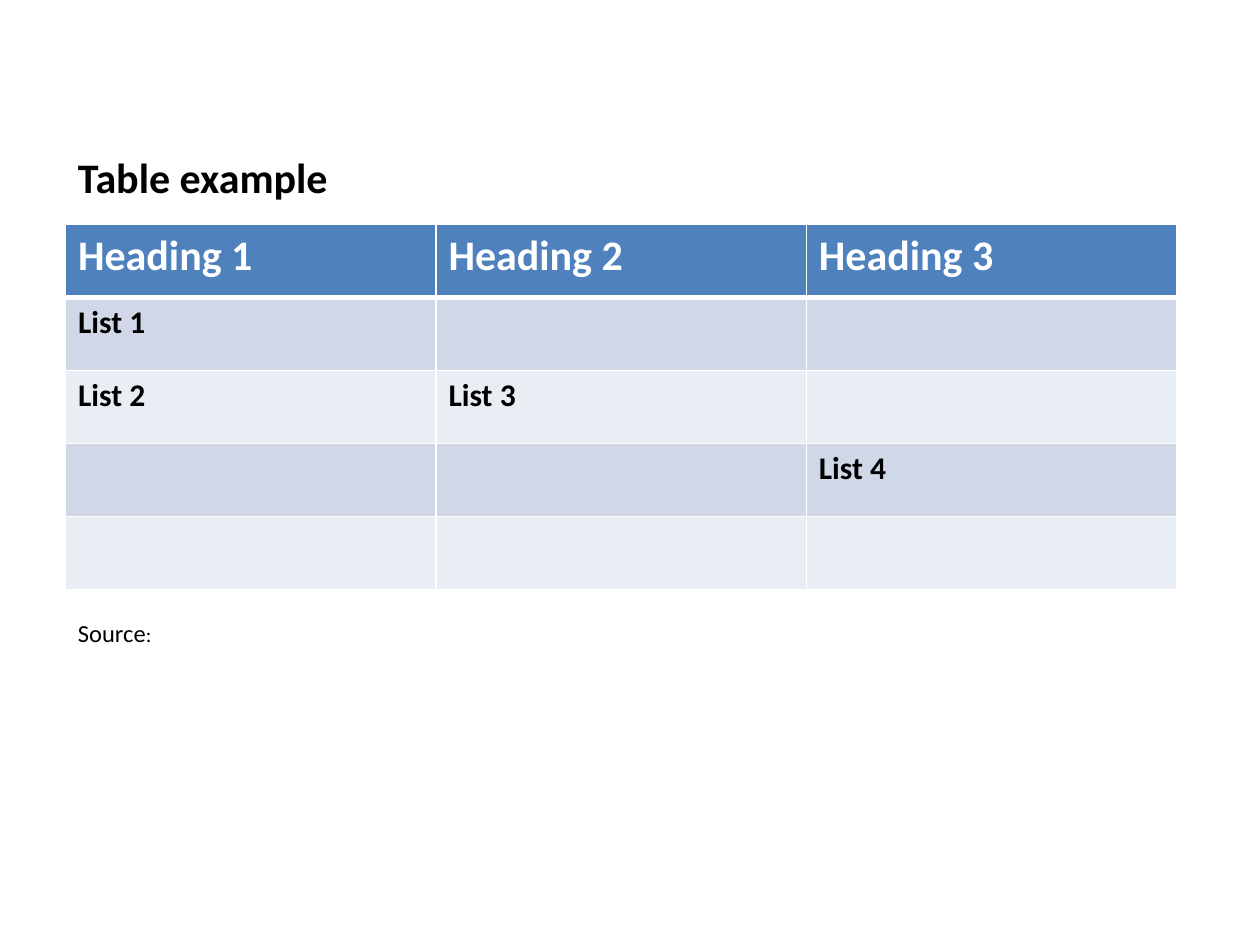
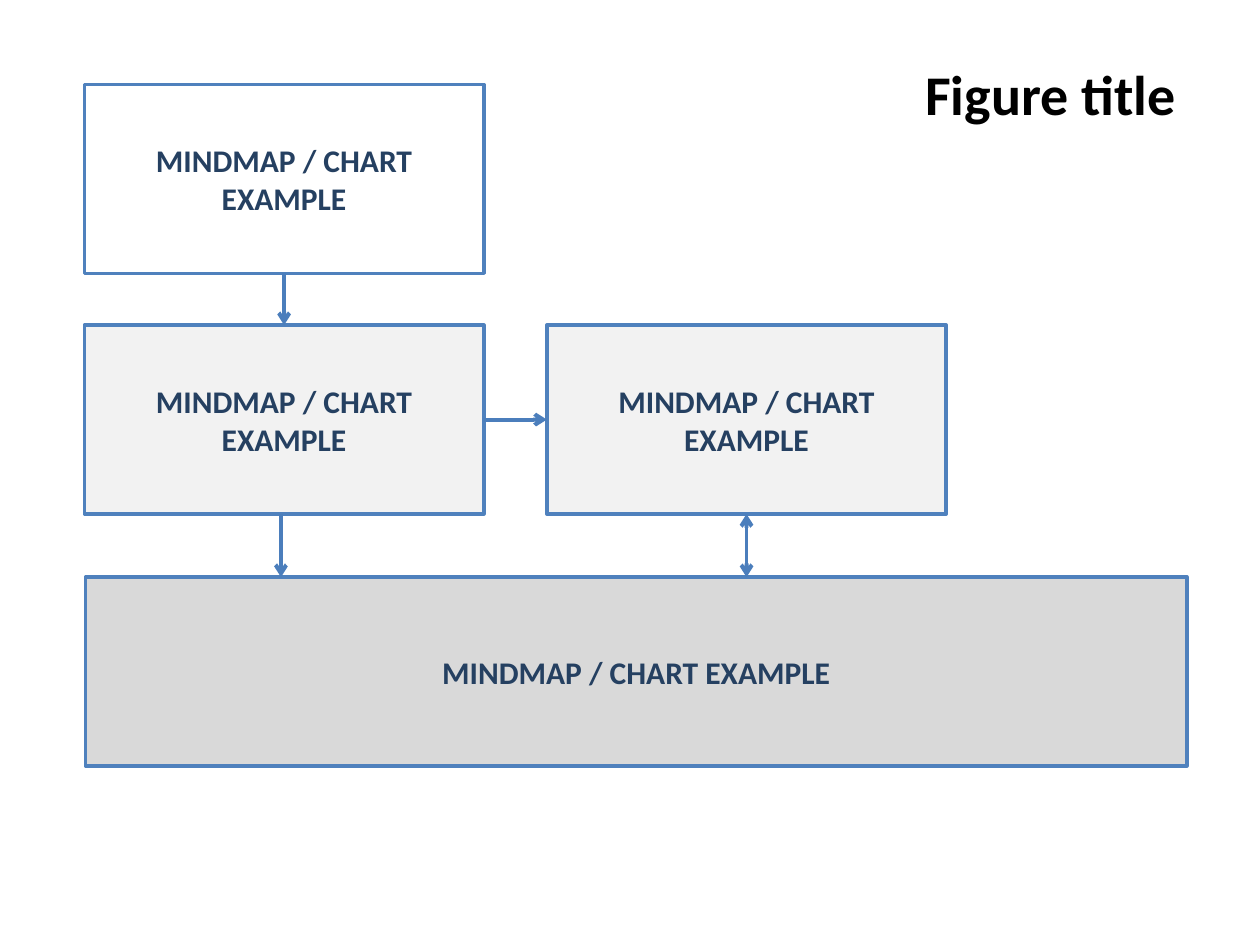
from lxml.etree import SubElement
from pptx import Presentation
from pptx.dml.color import RGBColor
from pptx.enum.shapes import MSO_CONNECTOR, MSO_SHAPE
from pptx.enum.text import MSO_ANCHOR, PP_ALIGN
from pptx.oxml.ns import qn
from pptx.util import Inches, Pt

FONT = "Calibri"
BLACK = RGBColor(0x00, 0x00, 0x00)
WHITE = RGBColor(0xFF, 0xFF, 0xFF)
BLUE = RGBColor(0x4F, 0x81, 0xBD)
ARROW_BLUE = RGBColor(0x4B, 0x7E, 0xBC)
NAVY = RGBColor(0x25, 0x40, 0x61)
BAND_DARK = RGBColor(0xD0, 0xD8, 0xE8)
BAND_LIGHT = RGBColor(0xE9, 0xED, 0xF4)
LIGHT_GREY = RGBColor(0xF2, 0xF2, 0xF2)
GREY = RGBColor(0xD9, 0xD9, 0xD9)

TABLE_ROWS = [
    ["Heading 1", "Heading 2", "Heading 3"],
    ["List 1", "", ""],
    ["List 2", "List 3", ""],
    ["", "", "List 4"],
    ["", "", ""],
]
COLUMN_WIDTH, ROW_HEIGHT = 2.94, 0.58

BOX_WIDTH, BOX_HEIGHT = 3.17, 1.5
LEFT_COLUMN, RIGHT_COLUMN = 0.67, 4.34
TOP_ROW, MIDDLE_ROW, BOTTOM_ROW = 0.67, 2.58, 4.58
TWO_LINES = "MINDMAP / CHART\nEXAMPLE"
ONE_LINE = "MINDMAP / CHART EXAMPLE"


def style_font(font, size, color=BLACK, bold=True):
    font.name = FONT
    font.size = Pt(size)
    font.bold = bold
    font.color.rgb = color


def add_text(page, left, top, width, height, text, size, bold=True, align=PP_ALIGN.LEFT):
    box = page.shapes.add_textbox(Inches(left), Inches(top), Inches(width), Inches(height))
    box.text_frame.word_wrap = True
    para = box.text_frame.paragraphs[0]
    para.text = text
    para.alignment = align
    style_font(para.font, size, bold=bold)
    return para


def set_borders(cell, bottom_width):
    """Draw white cell borders, with its own width for the bottom one."""
    properties = cell._tc.get_or_add_tcPr()
    for side, width in (("L", 1), ("R", 1), ("T", 1), ("B", bottom_width)):
        line = SubElement(properties, qn(f"a:ln{side}"), w=str(Pt(width)))
        fill = SubElement(line, qn("a:solidFill"))
        SubElement(fill, qn("a:srgbClr"), val=str(WHITE))


def add_table(page, left, top, rows):
    columns = len(rows[0])
    table = page.shapes.add_table(
        len(rows), columns, Inches(left), Inches(top),
        Inches(COLUMN_WIDTH * columns), Inches(ROW_HEIGHT * len(rows)),
    ).table
    for column in table.columns:
        column.width = Inches(COLUMN_WIDTH)
    for row_index, texts in enumerate(rows):
        is_heading = row_index == 0
        band = BLUE if is_heading else (BAND_LIGHT, BAND_DARK)[row_index % 2]
        table.rows[row_index].height = Inches(ROW_HEIGHT)
        for column_index, text in enumerate(texts):
            cell = table.cell(row_index, column_index)
            set_borders(cell, 3 if is_heading else 1)
            cell.fill.solid()
            cell.fill.fore_color.rgb = band
            para = cell.text_frame.paragraphs[0]
            para.text = text
            style_font(para.font, 24 if is_heading else 18, WHITE if is_heading else BLACK)


def add_box(page, left, top, text, fill, width=BOX_WIDTH):
    box = page.shapes.add_shape(
        MSO_SHAPE.RECTANGLE, Inches(left), Inches(top), Inches(width), Inches(BOX_HEIGHT))
    box.shadow.inherit = False
    box.fill.solid()
    box.fill.fore_color.rgb = fill
    box.line.color.rgb = BLUE
    box.line.width = Pt(2)
    frame = box.text_frame
    frame.word_wrap = True
    frame.vertical_anchor = MSO_ANCHOR.MIDDLE
    frame.text = text
    for para in frame.paragraphs:
        para.alignment = PP_ALIGN.CENTER
        style_font(para.font, 18, NAVY)


def add_arrow(page, start, end, both_ends=False):
    arrow = page.shapes.add_connector(
        MSO_CONNECTOR.STRAIGHT, *(Inches(value) for value in (*start, *end)))
    arrow.line.color.rgb = ARROW_BLUE
    arrow.line.width = Pt(2.25)
    line = arrow.line._get_or_add_ln()
    for name in ("headEnd", "tailEnd") if both_ends else ("tailEnd",):
        SubElement(line, qn(f"a:{name}"), type="arrow")
    SubElement(arrow._element.spPr, qn("a:effectLst"))


def build_table_page(page):
    add_table(page, 0.52, 1.78, TABLE_ROWS)
    add_text(page, 0.52, 1.15, 4.92, 0.5, "Table example", 24)
    source = add_text(page, 0.52, 4.86, 3.92, 0.34, "Source", 14, bold=False)
    colon = source.add_run()
    colon.text = ":"
    colon.font.size = Pt(12)


def build_mindmap_page(page):
    add_box(page, LEFT_COLUMN, TOP_ROW, TWO_LINES, WHITE)
    add_box(page, LEFT_COLUMN, MIDDLE_ROW, TWO_LINES, LIGHT_GREY)
    add_box(page, RIGHT_COLUMN, MIDDLE_ROW, TWO_LINES, LIGHT_GREY)
    add_box(page, 0.68, BOTTOM_ROW, ONE_LINE, GREY, width=8.74)

    left_center = LEFT_COLUMN + BOX_WIDTH / 2
    right_center = RIGHT_COLUMN + BOX_WIDTH / 2
    middle_center = MIDDLE_ROW + BOX_HEIGHT / 2
    middle_bottom = MIDDLE_ROW + BOX_HEIGHT
    add_arrow(page, (left_center, TOP_ROW + BOX_HEIGHT), (left_center, MIDDLE_ROW))
    add_arrow(page, (2.23, middle_bottom), (2.23, BOTTOM_ROW))
    add_arrow(page, (right_center, middle_bottom), (right_center, BOTTOM_ROW), both_ends=True)
    add_arrow(page, (LEFT_COLUMN + BOX_WIDTH, middle_center), (RIGHT_COLUMN, middle_center))

    add_text(page, 4.51, 0.42, 4.92, 0.64, "Figure title", 32, align=PP_ALIGN.RIGHT)


def main():
    deck = Presentation()
    deck.slide_width = Inches(10)
    deck.slide_height = Inches(7.5)
    blank = deck.slide_layouts[6]
    for build_page in (build_table_page, build_mindmap_page):
        build_page(deck.slides.add_slide(blank))
    deck.save("out.pptx")


if __name__ == "__main__":
    main()
